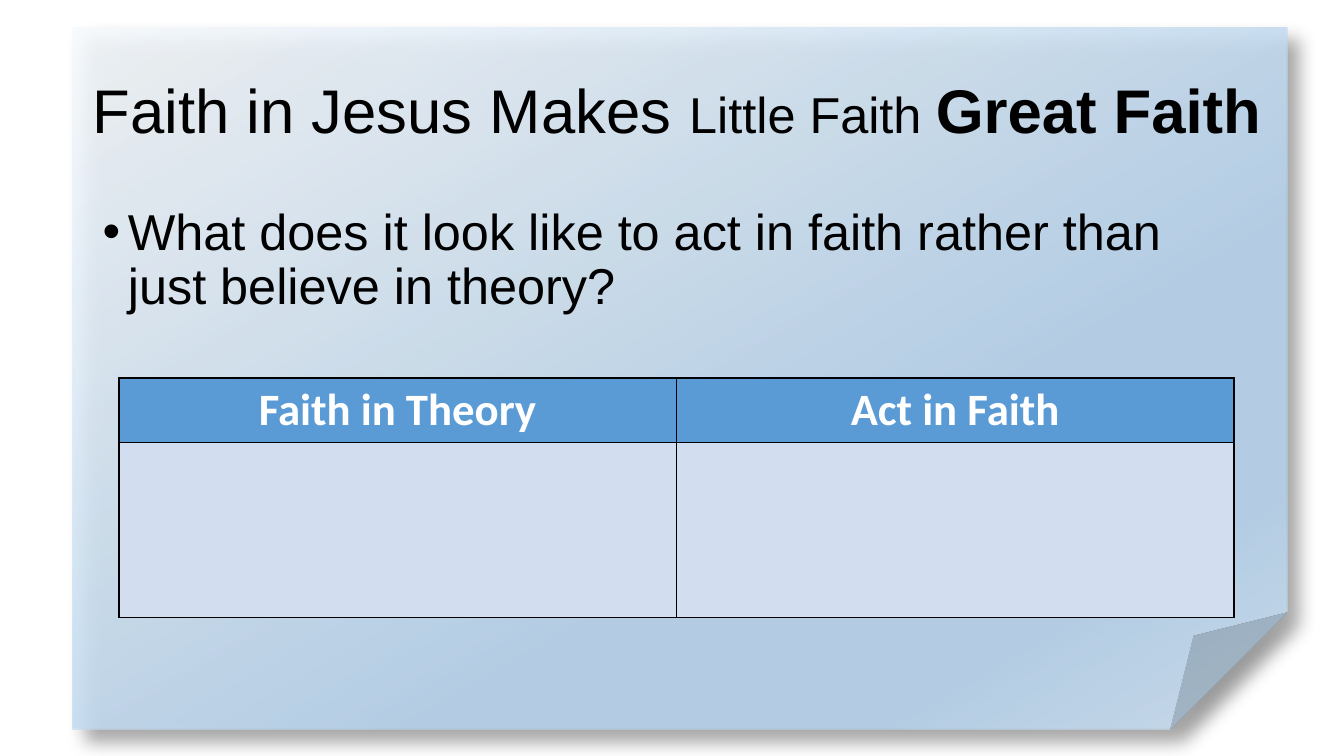
from lxml import etree
from pptx import Presentation
from pptx import util as u
from pptx.dml.color import RGBColor
from pptx.enum import shapes, text
from pptx.oxml import parse_xml
from pptx.oxml.ns import nsdecls, qn

PX = 9144  # 100 px to the inch
BLACK = "000000"
PAPER_STOPS = [(0, "F7FAFD"), (64, "B5D2EC"), (83, "B5D2EC"), (100, "CEE1F2")]


def px(*lengths):
    return [u.Emu(length * PX) for length in lengths]


def rgb(value):
    return RGBColor.from_string(value)


def add_run(paragraph, words, size, font="Arial", color=BLACK, bold=False):
    run = paragraph.add_run()
    run.text = words
    run.font.size = u.Pt(size)
    run.font.name = font
    run.font.bold = bold
    run.font.color.rgb = rgb(color)


def add_paper(slide, box):
    """Folded sheet with a translucent diagonal gradient and a soft shadow."""
    paper = slide.shapes.add_shape(shapes.MSO_SHAPE.FOLDED_CORNER, *px(*box))
    paper.line.fill.background()
    stops = "".join(
        f'<a:gs pos="{place * 1000}"><a:srgbClr val="{color}">'
        f'<a:alpha val="87000"/></a:srgbClr></a:gs>'
        for place, color in PAPER_STOPS
    )
    gradient = parse_xml(
        f'<a:gradFill {nsdecls("a")} rotWithShape="1"><a:gsLst>{stops}</a:gsLst>'
        f'<a:lin ang="{60 * 60000}" scaled="0"/></a:gradFill>'
    )
    shadow = parse_xml(
        f'<a:effectLst {nsdecls("a")}><a:outerShdw blurRad="{u.Pt(13)}" '
        f'dist="{u.Pt(13)}" dir="{45 * 60000}" algn="tl" rotWithShape="0">'
        f'<a:srgbClr val="{BLACK}"><a:alpha val="40000"/></a:srgbClr>'
        f'</a:outerShdw></a:effectLst>'
    )
    properties = paper.fill._xPr
    properties.find(qn("a:prstGeom")).addnext(gradient)
    properties.append(shadow)


def add_text(slide, box, anchor):
    """Add a wrapping text box and return its first paragraph."""
    frame = slide.shapes.add_textbox(*px(*box)).text_frame
    frame.word_wrap = True
    frame.vertical_anchor = anchor
    paragraph = frame.paragraphs[0]
    paragraph.line_spacing = 0.9
    return paragraph


def add_bullet(paragraph, indent):
    properties = paragraph._p.get_or_add_pPr()
    properties.set("marL", str(indent * PX))
    properties.set("indent", str(-indent * PX))
    etree.SubElement(properties, qn("a:buFont")).set("typeface", "Arial")
    etree.SubElement(properties, qn("a:buChar")).set("char", "•")


def style_cell(cell, fill):
    cell.fill.solid()
    cell.fill.fore_color.rgb = rgb(fill)
    properties = cell._tc.get_or_add_tcPr()
    for index, side in enumerate("LRTB"):
        border = parse_xml(
            f'<a:ln{side} {nsdecls("a")} w="{u.Pt(1)}"><a:solidFill>'
            f'<a:srgbClr val="{BLACK}"/></a:solidFill></a:ln{side}>'
        )
        properties.insert(index, border)


def add_answer_table(slide, box, headings, heights):
    """Headed columns with an empty row for answers."""
    frame = slide.shapes.add_table(len(heights), len(headings), *px(*box))
    table = frame.table
    for row, height in zip(table.rows, px(*heights)):
        row.height = height
    for column, heading in enumerate(headings):
        header = table.cell(0, column)
        style_cell(header, "5B9BD5")
        style_cell(table.cell(1, column), "D2DEEF")
        paragraph = header.text_frame.paragraphs[0]
        paragraph.alignment = text.PP_ALIGN.CENTER
        add_run(paragraph, heading, 32, "Calibri", "FFFFFF", True)


def main():
    presentation = Presentation()
    presentation.slide_width, presentation.slide_height = px(1333, 750)
    slide = presentation.slides.add_slide(presentation.slide_layouts[6])

    add_paper(slide, (72, 27, 1205, 697))

    title = add_text(slide, (72, 40, 1199, 145), text.MSO_ANCHOR.MIDDLE)
    title.alignment = text.PP_ALIGN.CENTER
    add_run(title, "Faith in Jesus Makes ", 44)
    add_run(title, "Little Faith ", 36)
    add_run(title, "Great Faith", 44, bold=True)

    question = add_text(slide, (92, 200, 1150, 476), text.MSO_ANCHOR.TOP)
    add_bullet(question, 25)
    add_run(question, "What does it look like to act in faith rather than "
                      "just believe in theory?", 36)

    add_answer_table(slide, (118, 375, 1106, 238),
                     ["Faith in Theory", "Act in Faith"], [64, 174])
    presentation.save("out.pptx")


if __name__ == "__main__":
    main()
